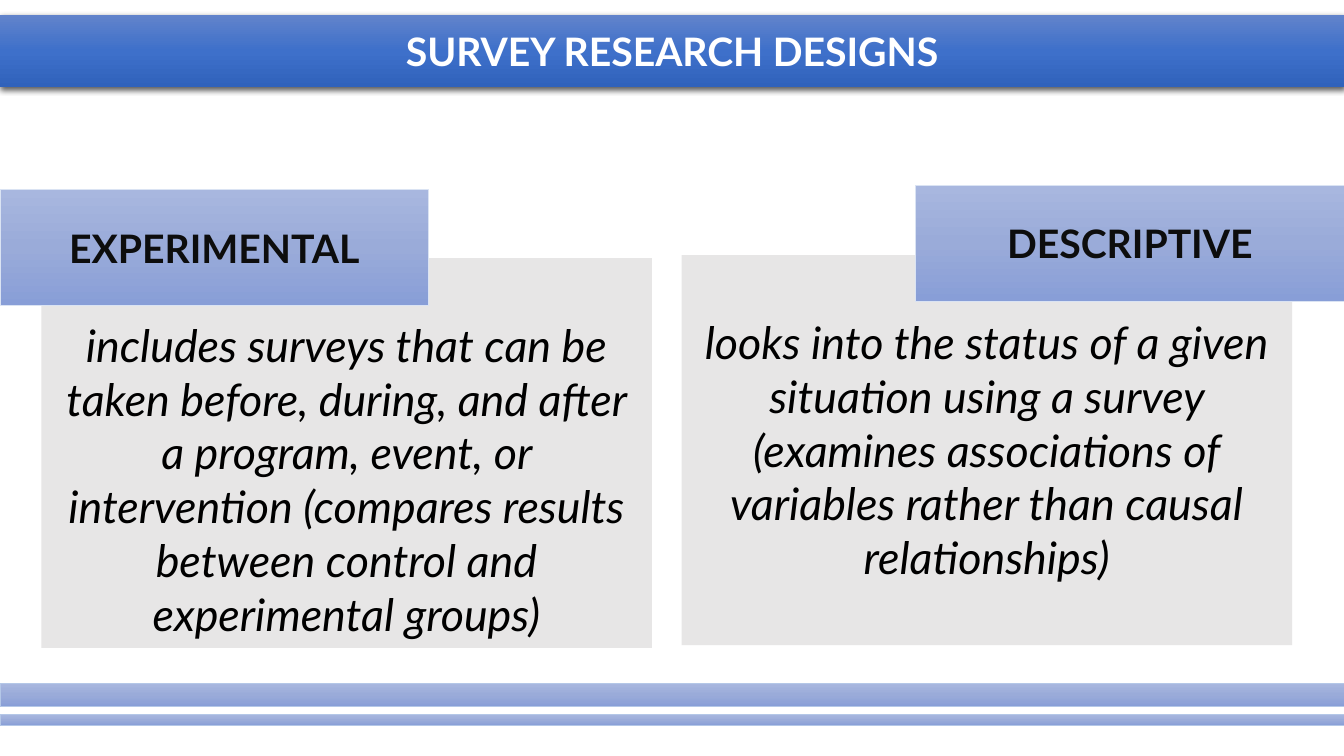
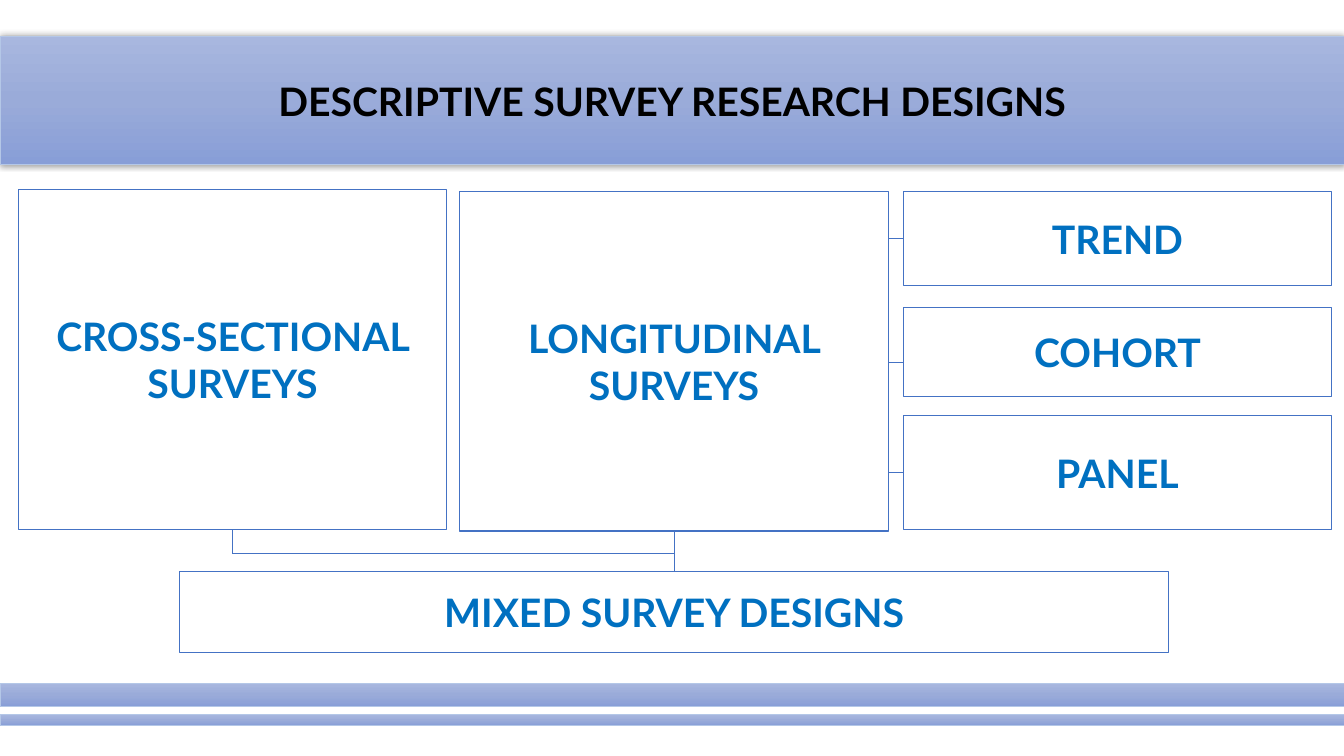
from copy import deepcopy
from dataclasses import dataclass

from lxml.etree import SubElement
from pptx import Presentation
from pptx.dml.color import RGBColor
from pptx.enum.shapes import MSO_CONNECTOR, MSO_SHAPE
from pptx.enum.text import MSO_ANCHOR, MSO_AUTO_SIZE, PP_ALIGN
from pptx.oxml.ns import qn
from pptx.shapes.autoshape import Shape
from pptx.slide import Slide
from pptx.util import Pt


@dataclass(frozen=True)
class Theme:
    font: str = "Lato"
    label_size: float = 28
    body_size: float = 32
    deep_band: tuple[str, ...] = ("6183CB", "3E70CA", "3062BB")
    soft_band: tuple[str, ...] = ("A8B7DF", "9AABD9", "889ED7")
    band_line: str = "B4C7E7"
    tag_line: str = "DAE3F3"
    panel: str = "E7E6E6"
    outline: str = "4472C4"
    label: str = "0070C0"
    tag_text: str = "0D0D0D"
    black: str = "000000"
    white: str = "FFFFFF"


THEME = Theme()
SLIDE_W, SLIDE_H = 960, 540


@dataclass(frozen=True)
class Box:
    left: float
    top: float
    width: float
    height: float

    @property
    def right(self) -> float:
        return self.left + self.width

    @property
    def bottom(self) -> float:
        return self.top + self.height

    @property
    def center_x(self) -> float:
        return self.left + self.width / 2


@dataclass(frozen=True)
class Shadow:
    opacity: int
    blur: float
    distance: float


@dataclass(frozen=True)
class TitleBand:
    box: Box
    stops: tuple[str, ...]
    text_color: str
    shadow: Shadow
    line: str | None = None


@dataclass(frozen=True)
class Design:
    name: str
    description: str
    tag: Box
    panel: Box


@dataclass(frozen=True)
class SurveyType:
    name: str
    box: Box
    link_y: float = 0


# Shared styling
def rgb(color: str) -> RGBColor:
    return RGBColor.from_string(color)


def place(shape: Shape, box: Box) -> None:
    shape.left, shape.top = Pt(box.left), Pt(box.top)
    shape.width, shape.height = Pt(box.width), Pt(box.height)


def fill_gradient(shape: Shape, colors: tuple[str, ...]) -> None:
    shape.fill.gradient()
    shape.fill.gradient_angle = 270
    stop_list = shape.element.spPr.find(".//" + qn("a:gsLst"))
    stop_list.insert(1, deepcopy(stop_list[0]))
    for index, (stop, color) in enumerate(zip(shape.fill.gradient_stops, colors)):
        stop.position = index / 2
        stop.color.rgb = rgb(color)


def set_line(shape: Shape, color: str | None, width: float) -> None:
    if color is None:
        shape.line.fill.background()
    else:
        shape.line.color.rgb = rgb(color)
        shape.line.width = Pt(width)


def cast_shadow(shape: Shape, shadow: Shadow) -> None:
    shape.shadow.inherit = False
    effects = shape.element.spPr.find(qn("a:effectLst"))
    outer = SubElement(effects, qn("a:outerShdw"), blurRad=str(Pt(shadow.blur)),
                       dist=str(Pt(shadow.distance)), dir="5400000",
                       algn="ctr", rotWithShape="0")
    color = SubElement(outer, qn("a:srgbClr"), val=THEME.black)
    SubElement(color, qn("a:alpha"), val=str(shadow.opacity * 1000))


def write(shape: Shape, text: str, color: str, size: float = THEME.label_size,
          bold: bool = True, italic: bool = False,
          anchor: MSO_ANCHOR = MSO_ANCHOR.MIDDLE) -> None:
    frame = shape.text_frame
    frame.word_wrap = True
    frame.auto_size = MSO_AUTO_SIZE.NONE
    frame.vertical_anchor = anchor
    paragraph = frame.paragraphs[0]
    paragraph.alignment = PP_ALIGN.CENTER
    paragraph.space_before = Pt(0)
    run = paragraph.add_run()
    run.text = text
    run.font.name, run.font.size = THEME.font, Pt(size)
    run.font.bold, run.font.italic = bold, italic
    run.font.color.rgb = rgb(color)


# Slide parts
def add_rectangle(slide: Slide, box: Box, line: str, line_width: float,
                  stops: tuple[str, ...] = ()) -> Shape:
    shape = slide.shapes.add_shape(MSO_SHAPE.RECTANGLE, Pt(box.left), Pt(box.top),
                                   Pt(box.width), Pt(box.height))
    shape.shadow.inherit = False
    if stops:
        fill_gradient(shape, stops)
    else:
        shape.fill.background()
    set_line(shape, line, line_width)
    return shape


def add_link(slide: Slide, x1: float, y1: float, x2: float, y2: float) -> None:
    link = slide.shapes.add_connector(MSO_CONNECTOR.STRAIGHT,
                                      Pt(x1), Pt(y1), Pt(x2), Pt(y2))
    set_line(link, THEME.outline, 0.5)
    SubElement(link.element.spPr, qn("a:effectLst"))


def fill_title(slide: Slide, text: str, band: TitleBand) -> None:
    title = slide.shapes.title
    place(title, band.box)
    fill_gradient(title, band.stops)
    set_line(title, band.line, 0.5)
    cast_shadow(title, band.shadow)
    write(title, text, band.text_color)


def fill_panel(panel: Shape, design: Design) -> None:
    place(panel, design.panel)
    panel.fill.solid()
    panel.fill.fore_color.rgb = rgb(THEME.panel)
    panel.text_frame.margin_top = Pt(42.5)
    write(panel, design.description, THEME.black, THEME.body_size,
          bold=False, italic=True, anchor=MSO_ANCHOR.TOP)
    properties = panel.text_frame.paragraphs[0]._p.get_or_add_pPr()
    properties.set("marL", "0")
    properties.set("indent", "0")
    SubElement(properties, qn("a:buNone"))


def add_footer(slide: Slide) -> None:
    for top, height in ((488.2, 16.5), (510.5, 7.9)):
        add_rectangle(slide, Box(0, top, SLIDE_W, height),
                      THEME.band_line, 0.5, THEME.soft_band)


def start_slide(prs: Presentation, layout: str, title: str, band: TitleBand) -> Slide:
    slide = prs.slides.add_slide(prs.slide_layouts.get_by_name(layout))
    fill_title(slide, title, band)
    add_footer(slide)
    return slide


# Content
DEEP_TITLE = TitleBand(Box(0, 10.8, SLIDE_W, 51.6), THEME.deep_band, THEME.white,
                       Shadow(63, 4.5, 1.5))
SOFT_TITLE = TitleBand(Box(0, 25.8, SLIDE_W, 91.8), THEME.soft_band, THEME.black,
                       Shadow(40, 5, 0), THEME.band_line)

COLUMN_W = 306
DESIGNS = (
    Design("EXPERIMENTAL",
           "includes surveys that can be taken before, during, and after a program, "
           "event, or intervention (compares results between control and "
           "experimental groups)",
           Box(0, 135.5, COLUMN_W, 82.5), Box(29.5, 184.3, 436.2, 278.5)),
    Design("DESCRIPTIVE",
           "looks into the status of a given situation using a survey (examines "
           "associations of variables rather than causal relationships)",
           Box(SLIDE_W - COLUMN_W, 132.5, COLUMN_W, 82.5),
           Box(486.8, 182.3, 436.2, 278.5)),
)

CROSS_SECTIONAL = SurveyType("CROSS-SECTIONAL SURVEYS", Box(13, 135.4, COLUMN_W, 242.5))
LONGITUDINAL = SurveyType("LONGITUDINAL SURVEYS", Box(328.4, 136.8, COLUMN_W, 242.5))
MIXED = SurveyType("MIXED SURVEY DESIGNS", Box(128.5, 408.2, 706, 58))
LONGITUDINAL_KINDS = (
    SurveyType("TREND", Box(645.2, 136.8, COLUMN_W, 67), 170.5),
    SurveyType("COHORT", Box(645.2, 219.5, COLUMN_W, 64), 258.5),
    SurveyType("PANEL", Box(645.2, 296.8, COLUMN_W, 81.2), 337.5),
)
JUNCTION_Y = 395.3


def build_survey_designs(prs: Presentation) -> None:
    slide = start_slide(prs, "Two Content", "SURVEY RESEARCH DESIGNS", DEEP_TITLE)
    for index, design in enumerate(DESIGNS, start=1):
        fill_panel(slide.placeholders[index], design)
        tag = add_rectangle(slide, design.tag, THEME.tag_line, 0.5, THEME.soft_band)
        write(tag, design.name, THEME.tag_text)


def build_descriptive_designs(prs: Presentation) -> None:
    slide = start_slide(prs, "Title Only", "DESCRIPTIVE SURVEY RESEARCH DESIGNS",
                        SOFT_TITLE)
    for survey in (CROSS_SECTIONAL, LONGITUDINAL, MIXED, *LONGITUDINAL_KINDS):
        frame = add_rectangle(slide, survey.box, THEME.outline, 0.75)
        write(frame, survey.name, THEME.label)

    # Both survey types join above the mixed designs
    cross, longitudinal = CROSS_SECTIONAL.box, LONGITUDINAL.box
    for box in (cross, longitudinal):
        add_link(slide, box.center_x, box.bottom, box.center_x, JUNCTION_Y)
    add_link(slide, cross.center_x, JUNCTION_Y, longitudinal.center_x, JUNCTION_Y)
    add_link(slide, longitudinal.center_x, JUNCTION_Y,
             longitudinal.center_x, MIXED.box.top)

    # Longitudinal surveys branch into their kinds
    for kind in LONGITUDINAL_KINDS:
        add_link(slide, longitudinal.right, kind.link_y, kind.box.left, kind.link_y)


def main() -> None:
    prs = Presentation()
    prs.slide_width, prs.slide_height = Pt(SLIDE_W), Pt(SLIDE_H)
    build_survey_designs(prs)
    build_descriptive_designs(prs)
    prs.save("out.pptx")


if __name__ == "__main__":
    main()
